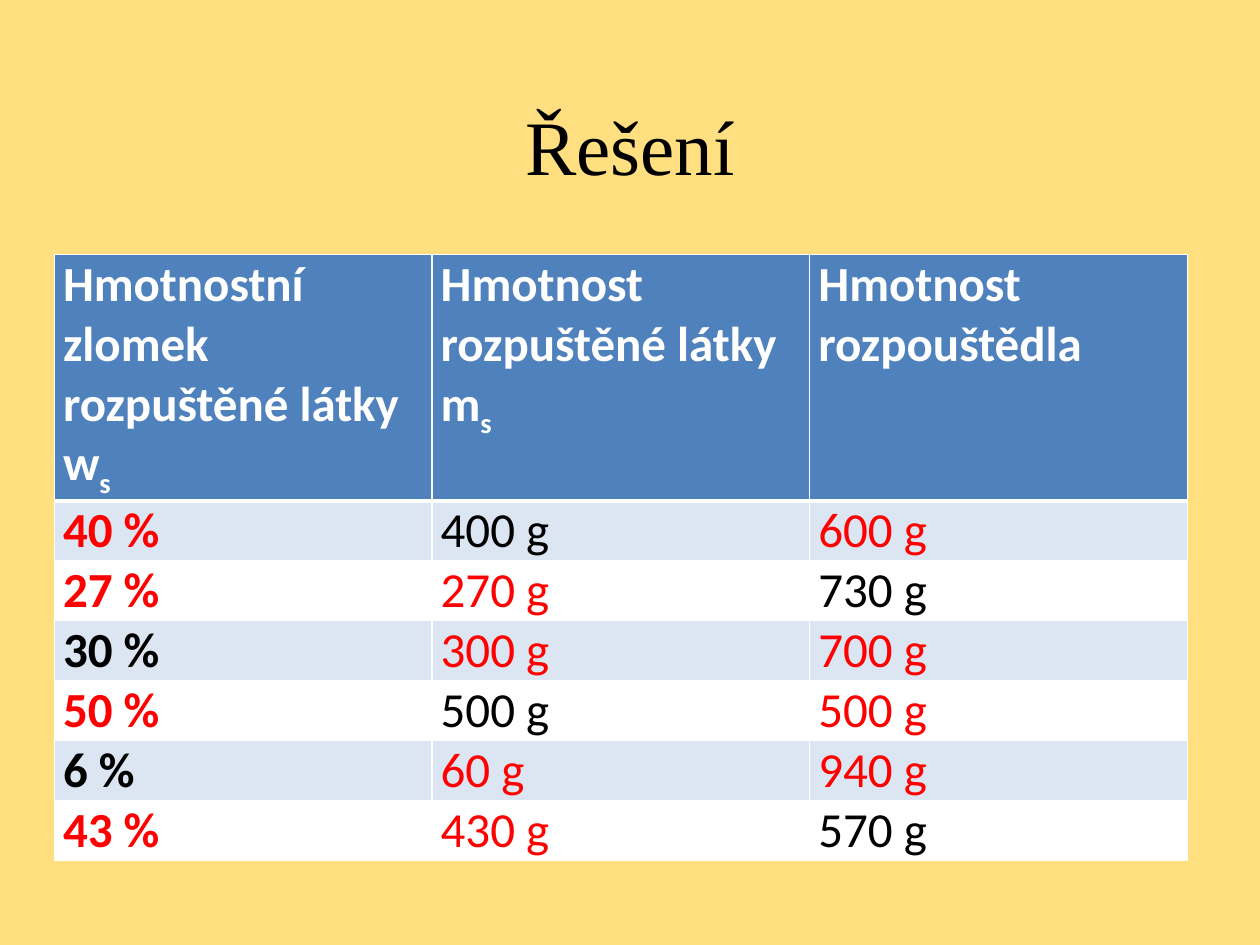
from lxml.etree import SubElement as Sub
from pptx import Presentation
from pptx.dml.color import RGBColor as Rgb
from pptx.enum.text import MSO_ANCHOR as Anchor, PP_ALIGN as Align
from pptx.oxml.ns import qn
from pptx.util import Pt

HEX = {"back": "FFDF80", "head": "4F81BD", "band": "DCE6F2",
       "white": "FFFFFF", "black": "000000", "red": "FF0000"}
HEADS = [("Hmotnostní zlomek rozpuštěné látky w", "s"),
         ("Hmotnost rozpuštěné látky m", "s"),
         ("Hmotnost rozpouštědla", "")]
ROWS = [("40 %", "400 g", "600 g"), ("27 %", "270 g", "730 g"),
        ("30 %", "300 g", "700 g"), ("50 %", "500 g", "500 g"),
        ("6 %", "60 g", "940 g"), ("43 %", "430 g", "570 g")]
GIVEN = [1, 2, 0, 1, 0, 2]


def tone(name):
    """Return the named colour."""
    return Rgb.from_string(HEX[name])


def put(item, **vals):
    """Set attributes from a dict of values."""
    for key, val in vals.items():
        setattr(item, key, val)


def write(para, text, hue, size, face, bold=False, base=0):
    """Add one formatted run to a paragraph."""
    run = para.add_run()
    run.text = text
    put(run.font, size=Pt(size), name=face, bold=bold)
    run.font.color.rgb = tone(hue)
    if base:
        run.font._element.set("baseline", str(base * 1000))


def edge(cell, top, low):
    """Draw white borders of the given top and bottom widths."""
    props = cell._tc.get_or_add_tcPr()
    for side, wide in zip("LRTB", (1, 1, top, low)):
        line = Sub(props, qn("a:ln" + side), w=str(Pt(wide)))
        fill = Sub(line, qn("a:solidFill"))
        Sub(fill, qn("a:srgbClr"), val=HEX["white"])


def style(cell, hue, top=1, low=1):
    """Set the margins, borders and fill of a cell."""
    put(cell, margin_left=Pt(5), margin_right=Pt(5),
        margin_top=0, margin_bottom=0)
    edge(cell, top, low)
    cell.fill.solid()
    cell.fill.fore_color.rgb = tone(hue)


def title(slide, left, top, width, height):
    """Place the heading in its placeholder."""
    shape = slide.shapes.title
    put(shape, left=Pt(left), top=Pt(top), width=Pt(width), height=Pt(height))
    shape.text_frame.vertical_anchor = Anchor.MIDDLE
    para = shape.text_frame.paragraphs[0]
    para.alignment = Align.CENTER
    write(para, "Řešení", "black", 44, "Times New Roman")


def grid(slide, left, top, width, height):
    """Place the table of solutions, with the given values in black."""
    frame = slide.shapes.add_table(len(ROWS) + 1, len(HEADS), Pt(left),
                                   Pt(top), Pt(width), Pt(height))
    table = frame.table
    for col in table.columns:
        col.width = Pt(width / len(HEADS))
    for num, row in enumerate(table.rows):
        row.height = Pt(28.8 if num else 57)
    frame.height = Pt(height)
    for col, (text, sub) in enumerate(HEADS):
        cell = table.cell(0, col)
        style(cell, "head", low=3)
        para = cell.text_frame.paragraphs[0]
        write(para, text, "white", 28, "Calibri", True)
        if sub:
            write(para, sub, "white", 28, "Calibri", True, -25)
    for num, (texts, given) in enumerate(zip(ROWS, GIVEN)):
        for col, text in enumerate(texts):
            cell = table.cell(num + 1, col)
            style(cell, "white" if num % 2 else "band", top=1 if num else 3)
            write(cell.text_frame.paragraphs[0], text,
                  "black" if col == given else "red", 28, "Calibri", col == 0)


def main():
    """Build and save the slide."""
    deck = Presentation()
    put(deck, slide_width=Pt(720), slide_height=Pt(540))
    slide = deck.slides.add_slide(deck.slide_layouts[5])
    slide.background.fill.solid()
    slide.background.fill.fore_color.rgb = tone("back")
    title(slide, 36, 37.5, 648, 90.5)
    grid(slide, 31, 145.5, 647.5, 336)
    deck.save("out.pptx")


if __name__ == "__main__":
    main()
